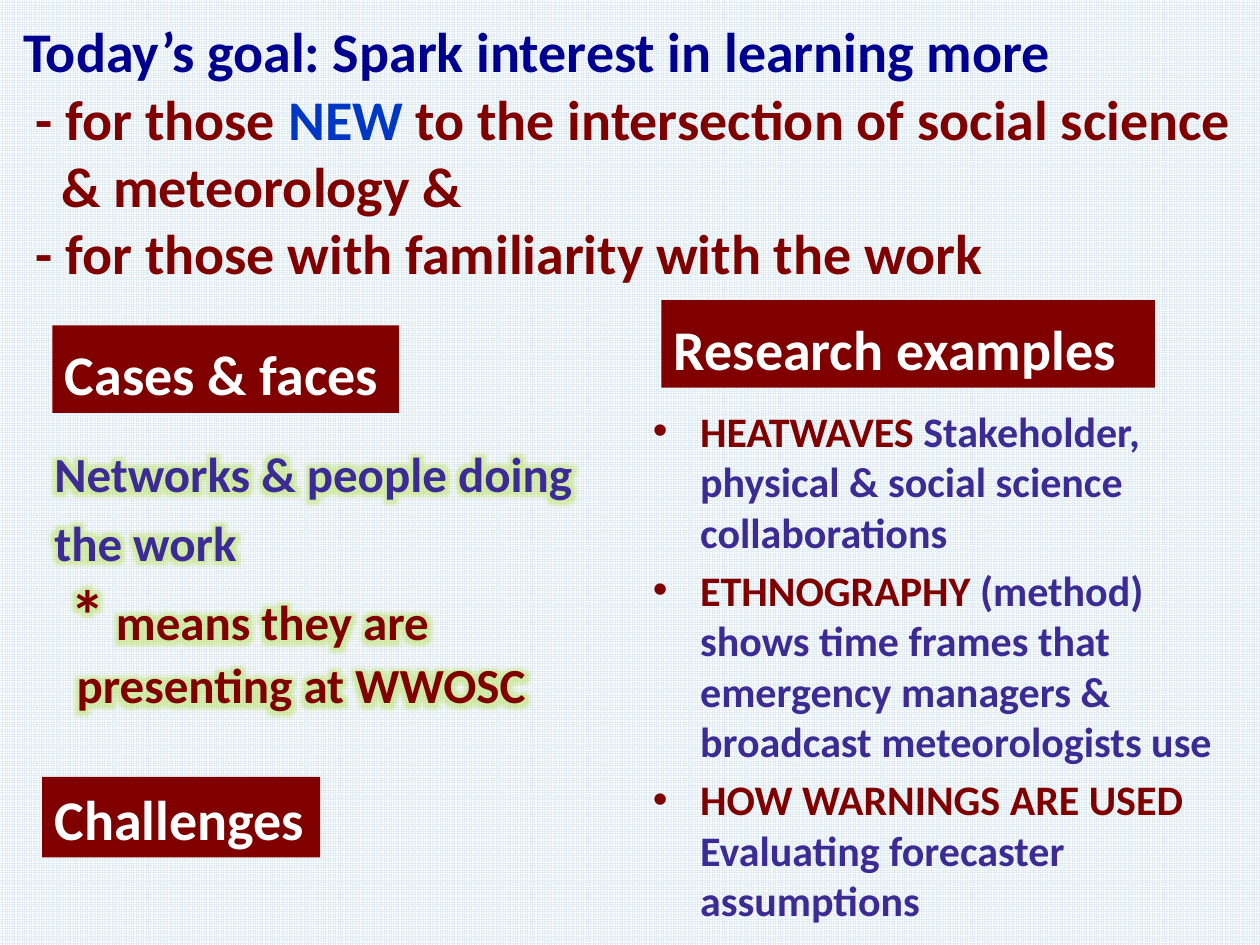
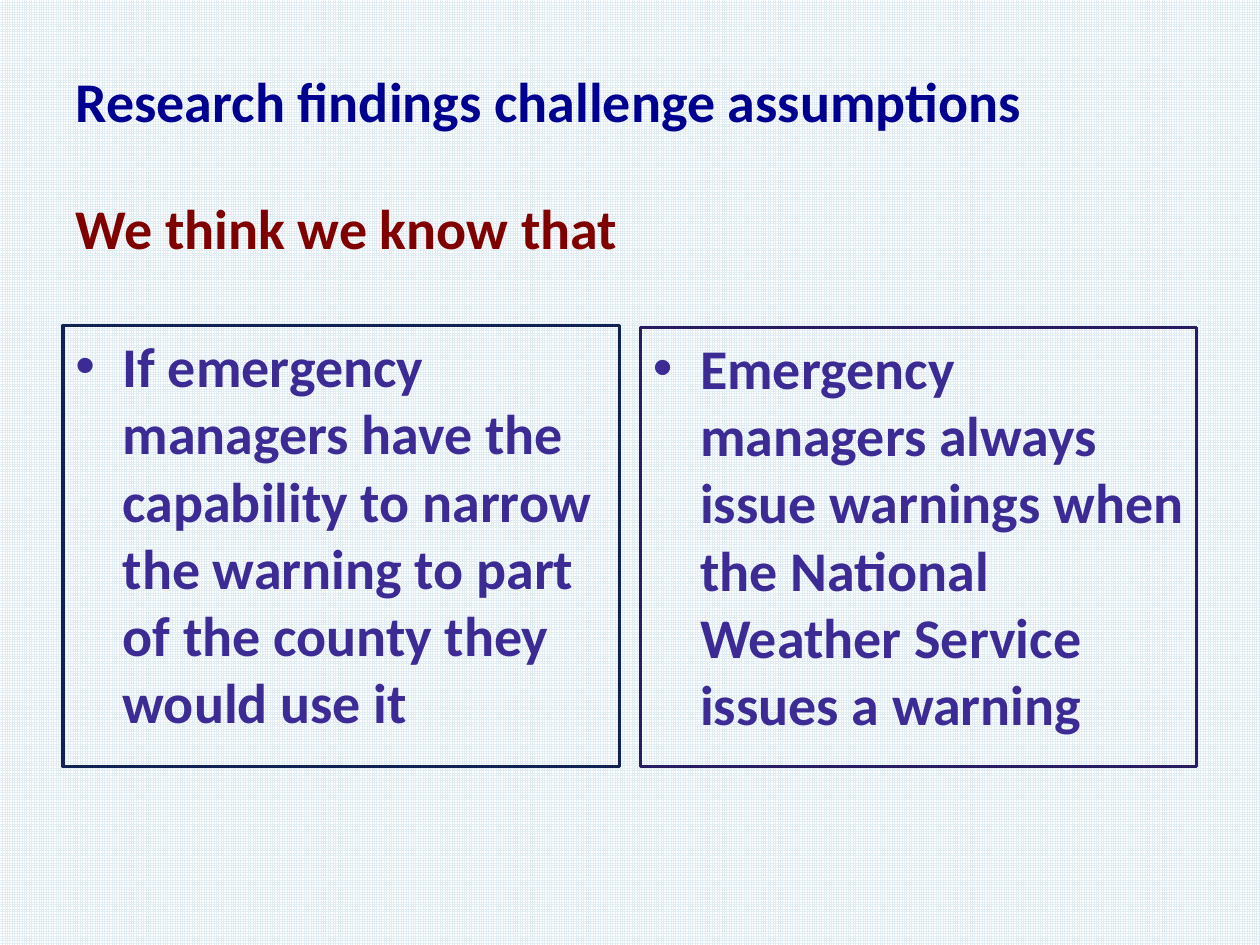
import dataclasses

import lxml.etree
import pptx
import pptx.dml.color
import pptx.enum.dml
import pptx.enum.shapes
import pptx.enum.text
import pptx.oxml.ns
import pptx.util

Pt = pptx.util.Pt
Anchor = pptx.enum.text.MSO_ANCHOR


@dataclasses.dataclass(frozen=True)
class Theme:
    """Colours, font and type sizes shared by the slides."""
    font: str = "Calibri"
    navy: str = "000090"
    maroon: str = "800000"
    blue: str = "0038C5"
    violet: str = "3C2B94"
    white: str = "FFFFFF"
    grid: str = "E2ECF3"
    glow: str = "A9DB32"
    frame_navy: str = "102352"
    frame_violet: str = "281C63"
    star: int = 40
    large: int = 32
    medium: int = 28
    small: int = 24
    hanging: int = 27


THEME = Theme()


def colour(code):
    """Return the colour object for a hex code."""
    return pptx.dml.color.RGBColor.from_string(code)


def add_element(parent, tag, **attributes):
    """Append a drawing element to a parent and return it."""
    element = lxml.etree.SubElement(parent, pptx.oxml.ns.qn(tag))
    for name, value in attributes.items():
        element.set(name, str(value))
    return element


def add_glow(span):
    """Give a run of text a soft green halo."""
    effects = lxml.etree.Element(pptx.oxml.ns.qn("a:effectLst"))
    glow = add_element(effects, "a:glow", rad=Pt(11))
    tint = add_element(glow, "a:srgbClr", val=THEME.glow)
    add_element(tint, "a:alpha", val=40000)
    fill = span.font._element.find(pptx.oxml.ns.qn("a:solidFill"))
    fill.addnext(effects)


def prepare_frame(box, anchor):
    """Set wrapping and vertical anchor of a box and return its text frame."""
    frame = box.text_frame
    frame.word_wrap = True
    frame.auto_size = pptx.enum.text.MSO_AUTO_SIZE.NONE
    frame.vertical_anchor = anchor
    return frame


def add_para(frame, spans, size, left=0, indent=0, before=0, bullet=False, glow=False):
    """Write one paragraph of (text, colour[, size]) spans into a frame."""
    first = not frame.paragraphs[0].runs
    para = frame.paragraphs[0] if first else frame.add_paragraph()
    para.alignment = pptx.enum.text.PP_ALIGN.LEFT
    para.space_before = Pt(0 if first else before)
    properties = para._p.get_or_add_pPr()
    properties.set("marL", str(Pt(left)))
    properties.set("indent", str(Pt(indent)))
    if bullet:
        add_element(properties, "a:buFont", typeface="Arial")
        add_element(properties, "a:buChar", char="•")
    for text, code, *own_size in spans:
        span = para.add_run()
        span.text = text
        span.font.name = THEME.font
        span.font.size = Pt(own_size[0] if own_size else size)
        span.font.bold = True
        span.font.color.rgb = colour(code)
        if glow:
            add_glow(span)


def add_text_box(page, area, anchor=Anchor.TOP):
    """Add a text box over an area and return its text frame."""
    return prepare_frame(page.shapes.add_textbox(*map(Pt, area)), anchor)


def add_rectangle(page, area):
    """Add a rectangle without a shadow."""
    box = page.shapes.add_shape(pptx.enum.shapes.MSO_SHAPE.RECTANGLE, *map(Pt, area))
    box.shadow.inherit = False
    return box


def add_banner(page, area, text):
    """Add a maroon heading band with white text."""
    box = add_rectangle(page, area)
    box.fill.solid()
    box.fill.fore_color.rgb = colour(THEME.maroon)
    box.line.fill.background()
    add_para(prepare_frame(box, Anchor.BOTTOM), [(text, THEME.white)], THEME.large)


def add_bullets(frame, items, size):
    """Write hanging bulleted paragraphs into a frame."""
    for spans in items:
        add_para(frame, spans, size, THEME.hanging, -THEME.hanging, 4.5, bullet=True)


def add_framed_point(page, area, text, line_code, line_width):
    """Add an outlined panel holding one bulleted statement."""
    box = add_rectangle(page, area)
    box.fill.background()
    box.line.color.rgb = colour(line_code)
    box.line.width = Pt(line_width)
    add_bullets(prepare_frame(box, Anchor.TOP), [[(text, THEME.violet)]], THEME.large)


def add_page(deck, title_area, anchor):
    """Add a grid-patterned page and return it with its title frame."""
    page = deck.slides.add_slide(deck.slide_layouts[5])
    fill = page.background.fill
    fill.patterned()
    fill.pattern = pptx.enum.dml.MSO_PATTERN.SMALL_GRID
    fill.fore_color.rgb = colour(THEME.grid)
    fill.back_color.rgb = colour(THEME.white)
    title = page.shapes.title
    title.left, title.top, title.width, title.height = map(Pt, title_area)
    return page, prepare_frame(title, anchor)


def add_network_notes(page, area):
    """Write the glowing notes on networks and people."""
    frame = add_text_box(page, area)
    for text in ("Networks & people doing", "the work"):
        add_para(frame, [(text, THEME.violet)], THEME.medium, before=5.5, glow=True)
    star_line = [("*", THEME.maroon, THEME.star), (" means they are", THEME.maroon)]
    add_para(frame, star_line, THEME.medium, left=9, glow=True)
    add_para(frame, [("presenting at WWOSC", THEME.maroon)], THEME.medium,
             left=12.7, glow=True)


def build_goal_page(deck):
    """Build the page with the goal of the talk and its three topics."""
    page, title = add_page(deck, (6, 6, 708, 164), Anchor.TOP)
    add_para(title, [("Today’s goal: Spark interest in learning more", THEME.navy)],
             THEME.large)
    audiences = (
        [("- for those ", THEME.maroon), ("NEW", THEME.blue),
         (" to the intersection of social science & meteorology &", THEME.maroon)],
        [("- for those with familiarity with the work", THEME.maroon)],
    )
    for spans in audiences:
        add_para(title, spans, THEME.large, left=21.7, indent=-14.5)

    add_network_notes(page, (24, 250, 366, 271))
    research = (
        ("HEATWAVES", " Stakeholder, physical & social science collaborations"),
        ("ETHNOGRAPHY", " (method) shows time frames that emergency managers"
                        " & broadcast meteorologists use"),
        ("HOW WARNINGS ARE USED", " Evaluating forecaster assumptions"),
    )
    add_bullets(add_text_box(page, (366, 228, 348, 306)),
                [[(topic, THEME.maroon), (detail, THEME.violet)]
                 for topic, detail in research], THEME.small)

    add_banner(page, (30, 186, 198, 50), "Cases & faces")
    add_banner(page, (378, 171.5, 282, 50), "Research examples")
    add_banner(page, (24, 444, 159, 46), "Challenges")


def build_assumptions_page(deck):
    """Build the page with two assumptions side by side."""
    page, title = add_page(deck, (36, 12, 672, 90), Anchor.MIDDLE)
    add_para(title, [("Research findings challenge assumptions", THEME.navy)],
             THEME.large)
    subtitle = add_text_box(page, (36, 102, 420, 50.5), Anchor.BOTTOM)
    add_para(subtitle, [("We think we know that", THEME.maroon)], THEME.large)
    add_framed_point(page, (36, 186, 318, 252),
                     "If emergency managers have the capability to narrow the warning "
                     "to part of the county they would use it", THEME.frame_navy, 2)
    add_framed_point(page, (366, 187, 318, 251),
                     "Emergency managers always issue warnings when the National "
                     "Weather Service issues a warning", THEME.frame_violet, 1.75)


def main():
    """Build and save the deck."""
    deck = pptx.Presentation()
    deck.slide_width, deck.slide_height = Pt(720), Pt(540)
    build_goal_page(deck)
    build_assumptions_page(deck)
    deck.save("out.pptx")


if __name__ == "__main__":
    main()
